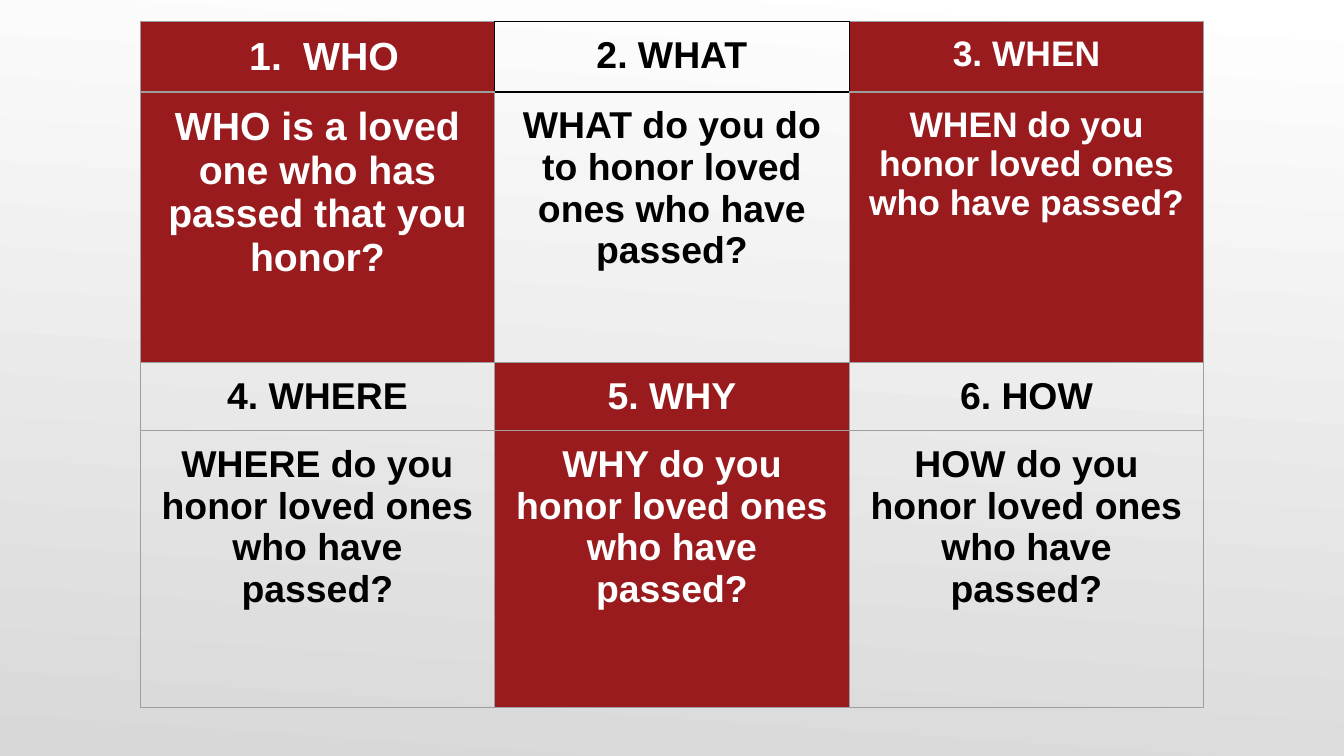
import pptx
import pptx.dml.color
import pptx.enum.text
import pptx.oxml.ns
import pptx.util
from lxml import etree

Cm, Pt = pptx.util.Cm, pptx.util.Pt

RED, WHITE, BLACK, GREY = "991B1E", "FFFFFF", "000000", "9E9E9E"

# heading, question, text size, red cell
QUESTIONS = [
    ("WHO", "WHO is a loved one who has passed that you honor?", 21, True),
    ("2. WHAT", "WHAT do you do to honor loved ones who have passed?", 20, False),
    ("3. WHEN", "WHEN do you honor loved ones who have passed?", 19, True),
    ("4. WHERE", "WHERE do you honor loved ones who have passed?", 20, False),
    ("5. WHY", "WHY do you honor loved ones who have passed?", 20, True),
    ("6. HOW", "HOW do you honor loved ones who have passed?", 20, False),
]
COLUMNS = 3
COLUMN_WIDTH = 6.7
ROW_HEIGHTS = [1.31, 5.11, 1.29, 5.24]
LEFT, TOP = 2.65, 0.41
# black edges surround the "2. WHAT" heading
BLACK_EDGES = {(0, 0): "R", (0, 1): "LRTB", (0, 2): "L", (1, 1): "T"}


def rgb(color):
    return pptx.dml.color.RGBColor.from_string(color)


def add_element(parent, tag, **attributes):
    return etree.SubElement(parent, pptx.oxml.ns.qn(tag), attributes)


def set_borders(cell, black_edges):
    tc_pr = cell._tc.get_or_add_tcPr()
    for side in "LRTB":
        line = add_element(tc_pr, f"a:ln{side}", w=str(Pt(0.75)))
        fill = add_element(line, "a:solidFill")
        add_element(fill, "a:srgbClr", val=BLACK if side in black_edges else GREY)


def number_paragraph(p, color):
    p_pr = p._p.get_or_add_pPr()
    p_pr.set("marL", str(Cm(1.27)))
    p_pr.set("indent", str(Cm(-1.02)))
    add_element(add_element(p_pr, "a:buClr"), "a:srgbClr", val=color)
    add_element(p_pr, "a:buFont", typeface="Arial")
    add_element(p_pr, "a:buAutoNum", type="arabicPeriod")


def fill_cell(cell, text, size, red, black_edges, numbered):
    color = WHITE if red else BLACK
    set_borders(cell, black_edges)
    if red:
        cell.fill.solid()
        cell.fill.fore_color.rgb = rgb(RED)
    else:
        cell.fill.background()
    cell.margin_left = cell.margin_right = Cm(0.25)
    cell.margin_top = cell.margin_bottom = Cm(0.25)
    p = cell.text_frame.paragraphs[0]
    p.alignment = pptx.enum.text.PP_ALIGN.CENTER
    if numbered:
        number_paragraph(p, color)
    r = p.add_run()
    r.text = text
    r.font.name = "Arial"
    r.font.size = Pt(size)
    r.font.bold = True
    r.font.color.rgb = rgb(color)


prs = pptx.Presentation()
prs.slide_width, prs.slide_height = Cm(25.4), Cm(14.29)
s = prs.slides.add_slide(prs.slide_layouts[6])

background = s.background.fill
background.gradient()
background.gradient_angle = 266
for stop, color in zip(background.gradient_stops, (WHITE, "D8D8D8")):
    stop.color.rgb = rgb(color)

frame = s.shapes.add_table(len(ROW_HEIGHTS), COLUMNS, Cm(LEFT), Cm(TOP),
                           Cm(COLUMNS * COLUMN_WIDTH), Cm(sum(ROW_HEIGHTS)))
table = frame.table
table.first_row = table.horz_banding = False
for column in table.columns:
    column.width = Cm(COLUMN_WIDTH)
for row, height in zip(table.rows, ROW_HEIGHTS):
    row.height = Cm(height)

for i, (heading, question, size, red) in enumerate(QUESTIONS):
    band, col = divmod(i, COLUMNS)
    for offset, text in enumerate((heading, question)):
        row = 2 * band + offset
        fill_cell(table.cell(row, col), text, size, red,
                  BLACK_EDGES.get((row, col), ""), numbered=text == "WHO")

prs.save("out.pptx")
